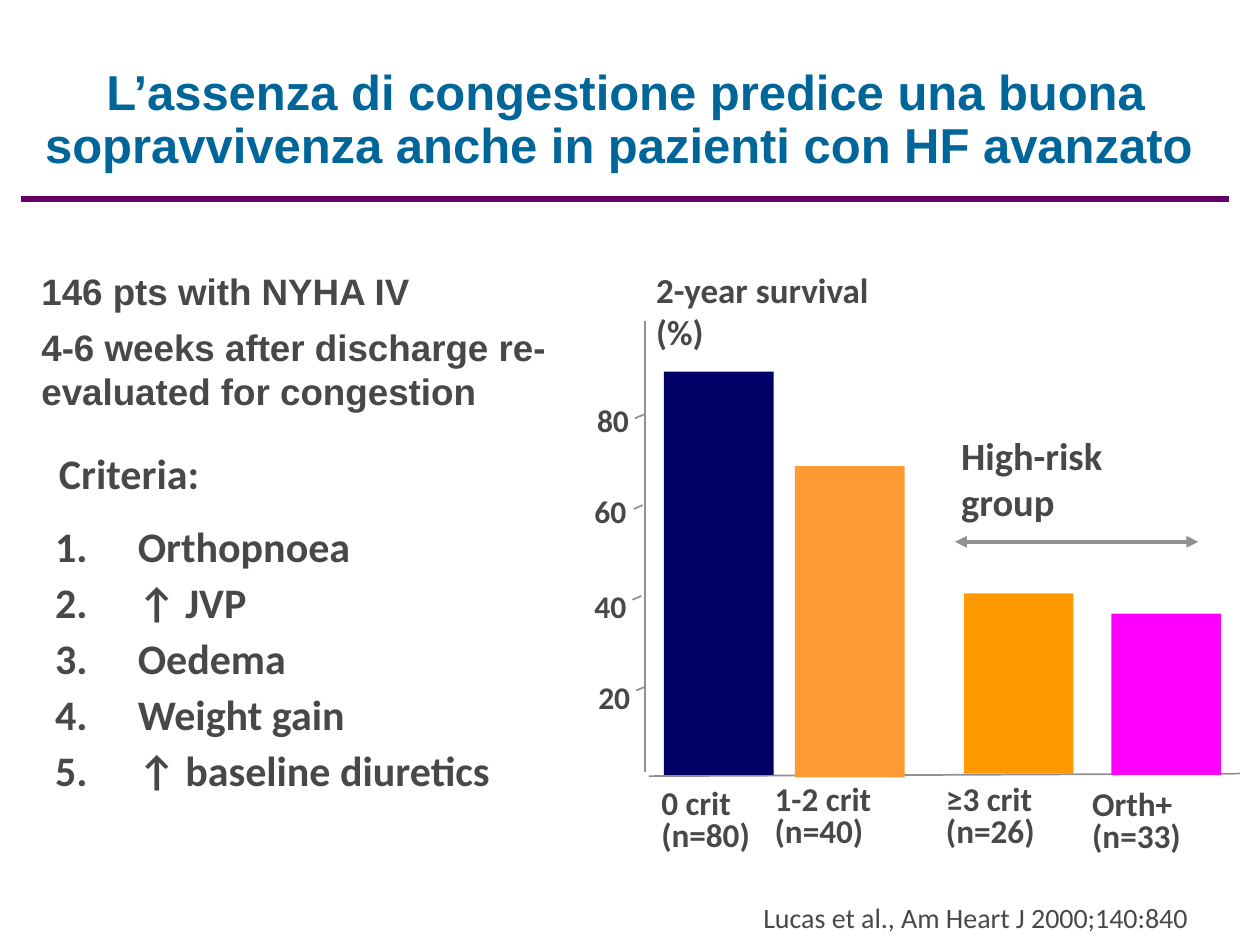
from dataclasses import dataclass

from lxml.etree import SubElement
from pptx import Presentation
from pptx.dml.color import RGBColor
from pptx.enum.shapes import MSO_CONNECTOR, MSO_SHAPE
from pptx.enum.text import MSO_ANCHOR, PP_ALIGN
from pptx.oxml.ns import qn
from pptx.util import Inches, Pt

TITLE_BLUE = RGBColor(0x00, 0x66, 0x99)
TEXT_GRAY = RGBColor(0x48, 0x48, 0x48)
LINE_GRAY = RGBColor(0x91, 0x91, 0x91)
RULE_PURPLE = RGBColor(0x66, 0x00, 0x66)
NAVY = RGBColor(0x00, 0x00, 0x66)
LIGHT_ORANGE = RGBColor(0xFF, 0x99, 0x33)
ORANGE = RGBColor(0xFF, 0x99, 0x00)
MAGENTA = RGBColor(0xFF, 0x00, 0xFF)
BAR_WIDTH = 0.87


@dataclass(frozen=True)
class Bar:
    left: float
    top: float
    height: float
    color: RGBColor
    paragraphs: list[str]
    label_left: float
    label_top: float
    label_width: float


@dataclass(frozen=True)
class Tick:
    value: int
    label_left: float
    label_top: float
    mark_left: float
    mark_top: float


BARS = [
    Bar(5.27, 2.95, 3.2, NAVY, ["0 crit", "(n=80)"], 5.15, 6.22, 1.06),
    Bar(6.31, 3.7, 2.47, LIGHT_ORANGE, ["1-2 crit", "(n=40)"], 6.05, 6.19, 1.34),
    Bar(7.65, 4.71, 1.43, ORANGE, ["≥3 crit", "(n=26)"], 7.41, 6.19, 1.34),
    Bar(8.82, 4.87, 1.28, MAGENTA, ["Orth+\n(n=33)"], 8.57, 6.23, 1.34),
]
TICKS = [
    Tick(20, 4.65, 5.33, 5.05, 5.45),
    Tick(40, 4.62, 4.61, 5.02, 4.73),
    Tick(60, 4.62, 3.86, 5.03, 4.01),
    Tick(80, 4.64, 3.13, 5.04, 3.29),
]
CRITERIA = [" Orthopnoea", " ↑ JVP", " Oedema", " Weight gain", " ↑ baseline diuretics"]


def place(shape, left: float, top: float, width: float, height: float) -> None:
    shape.left, shape.top = Inches(left), Inches(top)
    shape.width, shape.height = Inches(width), Inches(height)


def write_text(text_frame, paragraphs: list[str], *, size: float, font: str = "Calibri",
               color: RGBColor = TEXT_GRAY, bold: bool = True, wrap: bool = True,
               align: PP_ALIGN = PP_ALIGN.LEFT, line_spacing: float = 1.0,
               space_before: float = 0, numbered: bool = False) -> None:
    text_frame.word_wrap = wrap
    for index, text in enumerate(paragraphs):
        paragraph = text_frame.paragraphs[0] if index == 0 else text_frame.add_paragraph()
        paragraph.text = text
        paragraph.alignment = align
        paragraph.line_spacing = line_spacing
        paragraph.space_before = Pt(space_before)
        for run in paragraph.runs:
            run.font.size = Pt(size)
            run.font.name = font
            run.font.bold = bold
            run.font.color.rgb = color
        if numbered:
            properties = paragraph._p.get_or_add_pPr()
            properties.set("marL", str(Inches(0.58)))
            properties.set("indent", str(Inches(-0.58)))
            SubElement(properties, qn("a:buFont"), typeface="+mj-lt")
            SubElement(properties, qn("a:buAutoNum"), type="arabicPeriod")


def add_text(slide, left: float, top: float, width: float, height: float,
             paragraphs: list[str], **text_format) -> None:
    shape = slide.shapes.add_textbox(Inches(left), Inches(top), Inches(width), Inches(height))
    write_text(shape.text_frame, paragraphs, **text_format)


def add_line(slide, start: tuple[float, float], end: tuple[float, float], *,
             color: RGBColor = LINE_GRAY, width: float = 1, arrows: bool = False) -> None:
    connector = slide.shapes.add_connector(
        MSO_CONNECTOR.STRAIGHT, *map(Inches, start), *map(Inches, end))
    connector.line.color.rgb = color
    connector.line.width = Pt(width)
    if arrows:
        line = connector.line._get_or_add_ln()
        for tag in ("a:headEnd", "a:tailEnd"):
            SubElement(line, qn(tag), type="triangle")
    SubElement(connector._element.spPr, qn("a:effectLst"))


def add_bar(slide, bar: Bar) -> None:
    shape = slide.shapes.add_shape(
        MSO_SHAPE.RECTANGLE, Inches(bar.left), Inches(bar.top),
        Inches(BAR_WIDTH), Inches(bar.height))
    shape.shadow.inherit = False
    shape.fill.solid()
    shape.fill.fore_color.rgb = bar.color
    shape.line.fill.background()
    add_text(slide, bar.label_left, bar.label_top, bar.label_width, 0.61,
             bar.paragraphs, size=19, line_spacing=0.8)


def add_tick(slide, tick: Tick) -> None:
    add_line(slide, (tick.mark_left + 0.07, tick.mark_top), (tick.mark_left, tick.mark_top + 0.03))
    add_text(slide, tick.label_left, tick.label_top, 0.46, 0.4,
             [str(tick.value)], size=18, wrap=False)


def main() -> None:
    presentation = Presentation()
    presentation.slide_width, presentation.slide_height = Inches(10), Inches(7.5)
    slide = presentation.slides.add_slide(presentation.slide_layouts[5])

    title = slide.shapes.title
    place(title, 0.17, 0.4, 9.59, 1.12)
    title.text_frame.vertical_anchor = MSO_ANCHOR.MIDDLE
    write_text(title.text_frame,
               ["L’assenza di congestione predice una buona "
                "sopravvivenza anche in pazienti con HF avanzato "],
               size=28, font="Arial", color=TITLE_BLUE, align=PP_ALIGN.CENTER, line_spacing=0.9)
    add_line(slide, (0.17, 1.58), (9.75, 1.58), color=RULE_PURPLE, width=3)

    add_text(slide, 0.23, 2.08, 4.54, 1.42,
             ["146 pts with NYHA IV", "4-6 weeks after discharge re-evaluated for congestion"],
             size=21, font="Arial", space_before=7)
    add_text(slide, 0.37, 3.5, 1.33, 0.51, ["Criteria:"], size=24, wrap=False)
    add_text(slide, 0.34, 4.08, 3.73, 2.36, CRITERIA, size=24, space_before=3.2, numbered=True)

    add_line(slide, (5.12, 2.55), (5.12, 6.13))
    add_line(slide, (5.15, 6.16), (9.84, 6.14))
    for tick in TICKS:
        add_tick(slide, tick)
    for bar in BARS:
        add_bar(slide, bar)
    add_text(slide, 5.11, 2.08, 2.18, 0.77, ["2-year survival \n(%)"], size=20)
    add_text(slide, 7.53, 3.38, 1.99, 0.83, ["High-risk group"], size=22)
    add_line(slide, (7.58, 4.3), (9.51, 4.3), width=2.25, arrows=True)
    add_text(slide, 5.96, 7.1, 3.67, 0.37, ["Lucas et al., Am Heart J 2000;140:840"],
             size=16, bold=False, wrap=False)

    presentation.save("out.pptx")


if __name__ == "__main__":
    main()
